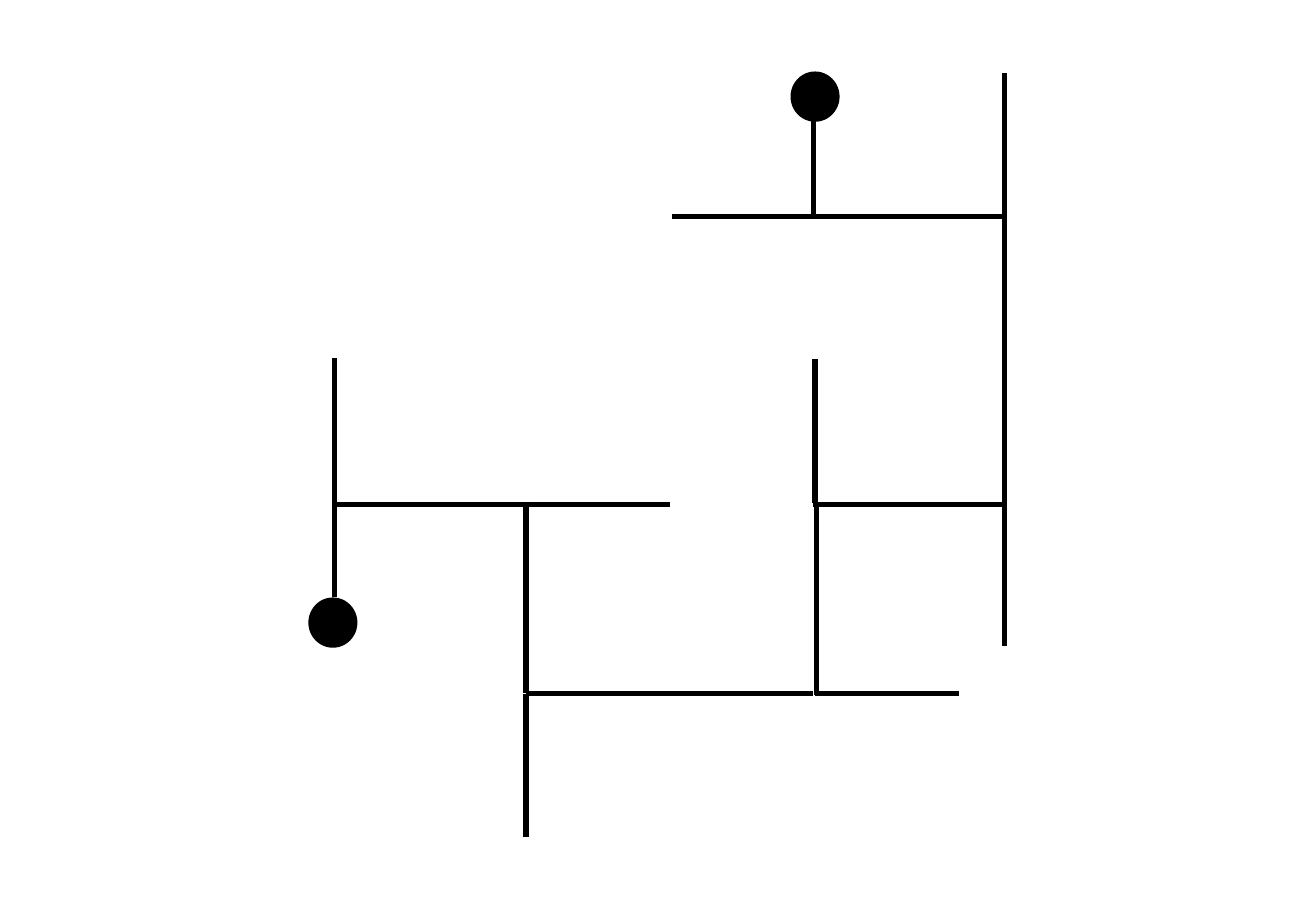
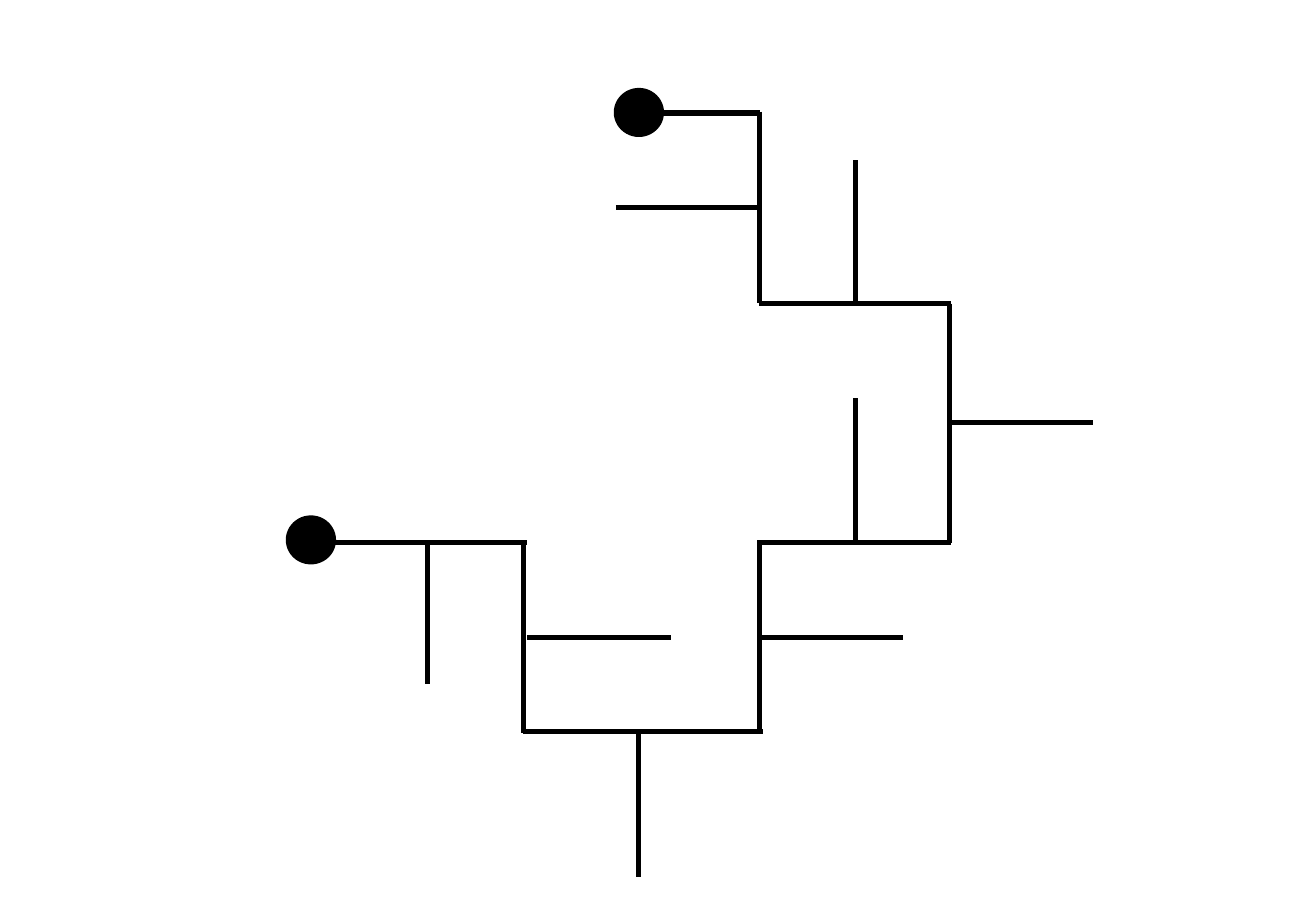
"""Build two slides of branching line diagrams with round end nodes."""
from lxml.etree import SubElement
from pptx import Presentation
from pptx.dml.color import RGBColor
from pptx.enum.shapes import MSO_CONNECTOR, MSO_SHAPE
from pptx.oxml.ns import qn
from pptx.util import Pt

COLORS = {"ink": "000000", "paper": "FFFFFF"}
SLIDE_SIZE = (780, 540)
UNIT = 28.35
NODE_SIZE = (28.8, 28.1)
NODE_BORDER = 1
BRANCH_WIDTH = 3

# Nodes are (left, top); branches are (left, top, length in units).
DIAGRAMS = [
    {
        "node_rotation": 270,
        "nodes": [(182.9, 355), (468.7, 43.2)],
        "across": [
            (311.8, 411.1, 6), (198, 298.8, 4), (311.8, 298.8, 3),
            (483.1, 411.1, 3), (398.2, 128.2, 3), (481.7, 298.8, 4),
            (483.1, 128.2, 4),
        ],
        "down": [
            (198, 297.4, 2), (198, 212.4, 3), (483.1, 213.1, 3),
            (595.4, 298.1, 3), (311.8, 297.4, 4), (483.8, 298.8, 4),
            (595.4, 43.2, 3), (311.8, 411.1, 3), (595.4, 128.2, 6),
            (482.4, 71.3, 2),
        ],
    },
    {
        "node_rotation": 0,
        "nodes": [(364.3, 52.6), (169.9, 306)],
        "across": [
            (393.8, 67, 2), (365, 123.1, 3), (450, 180, 4),
            (450, 321.8, 4), (563, 250.6, 3), (450, 378, 3),
            (312.5, 378, 3), (310.3, 433.4, 5), (198.7, 321.8, 4),
        ],
        "down": [
            (563, 180, 5), (450, 66.2, 4), (506.9, 95, 3),
            (506.9, 236.2, 3), (378.7, 434.9, 3), (450, 320.4, 4),
            (310.3, 321.1, 4), (253.4, 320.4, 3),
        ],
    },
]
DIRECTIONS = {"across": (UNIT, 0), "down": (0, UNIT)}


def color(name):
    return RGBColor.from_string(COLORS[name])


def add_node(group, left, top, rotation):
    node = group.shapes.add_shape(
        MSO_SHAPE.FLOWCHART_CONNECTOR, Pt(left), Pt(top), *map(Pt, NODE_SIZE)
    )
    node.rotation = rotation
    node.shadow.inherit = False
    node.fill.solid()
    node.fill.fore_color.rgb = color("ink")
    node.line.color.rgb = color("ink")
    node.line.width = Pt(NODE_BORDER)


def add_branch(group, left, top, units, step):
    right, bottom = left + units * step[0], top + units * step[1]
    branch = group.shapes.add_connector(
        MSO_CONNECTOR.STRAIGHT, Pt(left), Pt(top), Pt(right), Pt(bottom)
    )
    branch.line.color.rgb = color("ink")
    branch.line.width = Pt(BRANCH_WIDTH)
    SubElement(branch._element.spPr, qn("a:effectLst"))


def add_diagram(slide, diagram):
    group = slide.shapes.add_group_shape()
    for left, top in diagram["nodes"]:
        add_node(group, left, top, diagram["node_rotation"])
    for direction, step in DIRECTIONS.items():
        for left, top, units in diagram[direction]:
            add_branch(group, left, top, units, step)


def main():
    deck = Presentation()
    deck.slide_width, deck.slide_height = map(Pt, SLIDE_SIZE)
    background = deck.slide_master.background.fill
    background.solid()
    background.fore_color.rgb = color("paper")
    for diagram in DIAGRAMS:
        add_diagram(deck.slides.add_slide(deck.slide_layouts[6]), diagram)
    deck.save("out.pptx")


if __name__ == "__main__":
    main()
